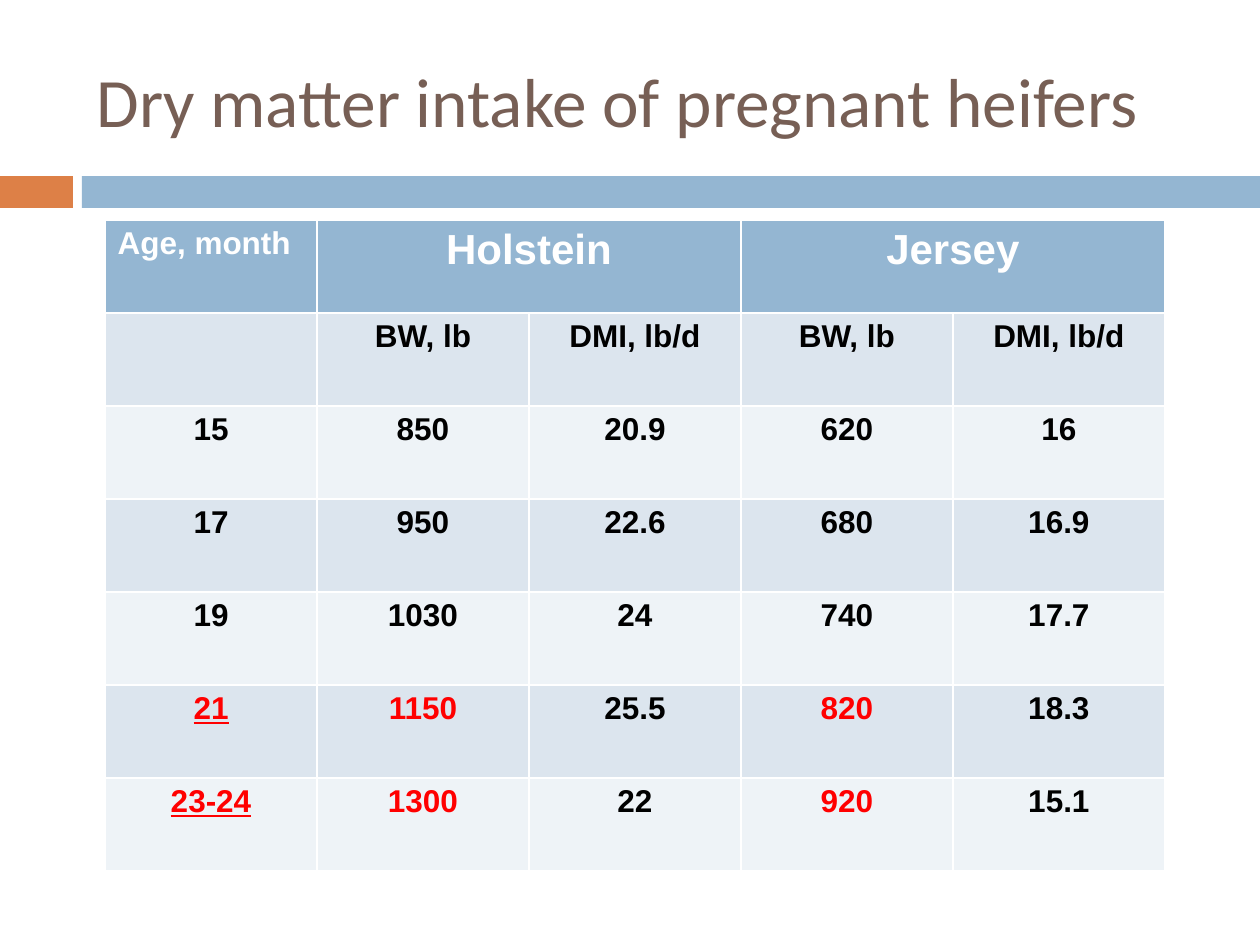
from pptx import Presentation
from pptx.dml.color import RGBColor
from pptx.enum.shapes import MSO_SHAPE
from pptx.enum.text import MSO_ANCHOR, MSO_AUTO_SIZE, PP_ALIGN
from pptx.util import Emu, Pt

SCALE = 914400 / 126
BLUE, ORANGE, BROWN = "94B6D2", "DD8047", "775F55"
WHITE, BLACK, RED = "FFFFFF", "000000", "FF0000"
BANDS = ["DCE5EE", "EEF3F7"]
HEADS = ["Age, month", "Holstein", "", "Jersey", ""]
ROWS = [
    ["", "BW, lb", "DMI, lb/d", "BW, lb", "DMI, lb/d"],
    ["15", "850", "20.9", "620", "16"],
    ["17", "950", "22.6", "680", "16.9"],
    ["19", "1030", "24", "740", "17.7"],
    ["21", "1150", "25.5", "820", "18.3"],
    ["23-24", "1300", "22", "920", "15.1"],
]
LATE = {"21", "23-24"}


def px(n):
    """Turn pixels into EMU."""
    return Emu(round(n * SCALE))


def paint(fill, tone):
    """Give a fill a solid colour."""
    fill.solid()
    fill.fore_color.rgb = RGBColor.from_string(tone)


def write(frame, text, size=18, tone=BLACK, font="Arial", bold=True,
          under=False, align=PP_ALIGN.CENTER):
    """Write one formatted line into a text frame."""
    para = frame.paragraphs[0]
    para.alignment = align
    run = para.add_run()
    run.text = text
    run.font.size = Pt(size)
    run.font.name = font
    run.font.bold = bold
    run.font.underline = under
    run.font.color.rgb = RGBColor.from_string(tone)


def add_title(slide, x, y, w, h):
    """Place the title in the given box."""
    title = slide.shapes.title
    title.left, title.top, title.width, title.height = map(px, (x, y, w, h))
    frame = title.text_frame
    frame.word_wrap = True
    frame.auto_size = MSO_AUTO_SIZE.NONE
    frame.vertical_anchor = MSO_ANCHOR.MIDDLE
    write(frame, "Dry matter intake of pregnant heifers", size=39.6,
          tone=BROWN, font="Calibri", bold=False, align=PP_ALIGN.LEFT)


def add_band(slide, x, y, w, h):
    """Draw the orange and blue bars across the given box."""
    tab, gap = 73, 9
    start = tab + gap
    for left, width, tone in [(x, tab, ORANGE), (x + start, w - start, BLUE)]:
        bar = slide.shapes.add_shape(
            MSO_SHAPE.RECTANGLE, *map(px, (left, y, width, h)))
        bar.shadow.inherit = False
        paint(bar.fill, tone)
        bar.line.fill.background()


def add_grid(slide, x, y, w, h):
    """Build the intake table in the given box."""
    count = len(ROWS) + 1
    grid = slide.shapes.add_table(
        count, len(HEADS), *map(px, (x, y, w, h))).table
    for col in grid.columns:
        col.width = px(w / len(HEADS))
    for row in grid.rows:
        row.height = px(h / count)
    for c, text in enumerate(HEADS):
        cell = grid.cell(0, c)
        paint(cell.fill, BLUE)
        if text:
            write(cell.text_frame, text, size=24 if c else 18, tone=WHITE,
                  align=PP_ALIGN.CENTER if c else PP_ALIGN.LEFT)
    for c in (1, 3):
        grid.cell(0, c).merge(grid.cell(0, c + 1))
    for r, row in enumerate(ROWS):
        late = row[0] in LATE
        for c, text in enumerate(row):
            cell = grid.cell(r + 1, c)
            paint(cell.fill, BANDS[r % 2])
            if text:
                write(cell.text_frame, text, under=late and c == 0,
                      tone=RED if late and c in (0, 1, 3) else BLACK)


def main():
    """Build and save the slide."""
    deck = Presentation()
    deck.slide_width, deck.slide_height = px(1260), px(945)
    slide = deck.slides.add_slide(deck.slide_layouts[5])
    add_band(slide, 0, 176, 1260, 32)
    add_title(slide, 84, 32, 1124, 136)
    add_grid(slide, 105, 220, 1060, 651)
    deck.save("out.pptx")


if __name__ == "__main__":
    main()
